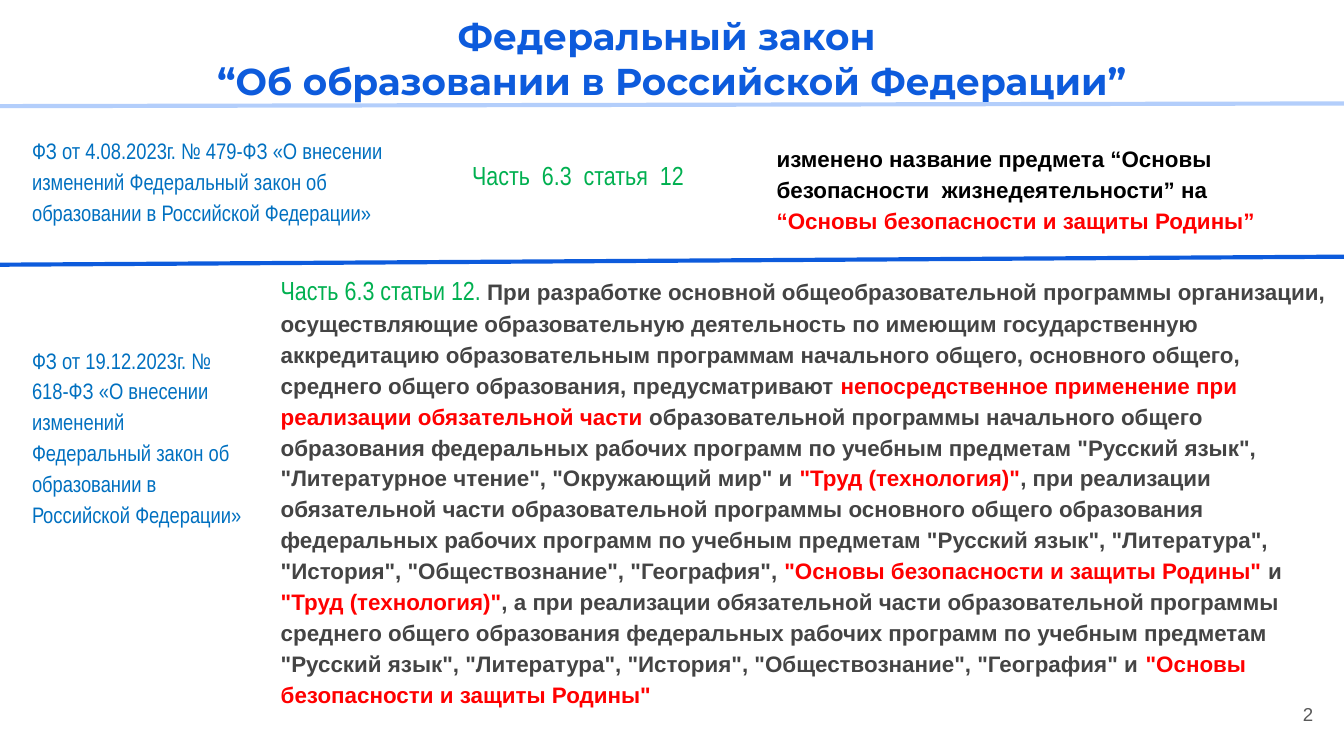
from lxml import etree
from pptx import Presentation
from pptx.dml.color import RGBColor
from pptx.enum.shapes import MSO_CONNECTOR
from pptx.enum.text import MSO_ANCHOR, MSO_AUTO_SIZE, PP_ALIGN
from pptx.oxml.ns import qn
from pptx.util import Inches, Pt

STRAIGHT = MSO_CONNECTOR.STRAIGHT
TOP, MIDDLE = MSO_ANCHOR.TOP, MSO_ANCHOR.MIDDLE
NO_AUTOFIT = MSO_AUTO_SIZE.NONE
LEFT, CENTER, RIGHT = PP_ALIGN.LEFT, PP_ALIGN.CENTER, PP_ALIGN.RIGHT

BLUE = RGBColor(0x0D, 0x5B, 0xDC)
PALE_BLUE = RGBColor(0xB3, 0xCE, 0xFB)
LAW_BLUE = RGBColor(0x00, 0x70, 0xC0)
GREEN = RGBColor(0x00, 0xB0, 0x50)
RED = RGBColor(0xFF, 0x00, 0x00)
BLACK = RGBColor(0x00, 0x00, 0x00)
DARK_GRAY = RGBColor(0x44, 0x44, 0x44)
GRAY = RGBColor(0x59, 0x59, 0x59)

# Run styles: font name, size in points, bold, colour
TITLE = ("Montserrat", 20, True, BLUE)
LAW = ("Arial Narrow", 12, False, LAW_BLUE)
ARTICLE = ("Arial Narrow", 14, False, GREEN)
STRONG = ("Arial", 12, True, BLACK)
BODY = ("Arial", 12, True, DARK_GRAY)
ACCENT = ("Arial", 12, True, RED)
NUMBER = ("Arial", 10, False, GRAY)

BODY_SPACING = {"line_spacing": 1.15, "space_after": Pt(12)}
ARTICLE_SPACING = {"line_spacing": 1.15, "space_before": Pt(12)}


def fill_text(shape, paragraphs, paragraph_format, anchor=TOP):
    """Write paragraphs, each a list of (text, run style), into the shape."""
    frame = shape.text_frame
    frame_format = {"word_wrap": True, "auto_size": NO_AUTOFIT, "vertical_anchor": anchor}
    for side in ("left", "right", "top", "bottom"):
        frame_format[f"margin_{side}"] = Inches(0.1)
    for name, value in frame_format.items():
        setattr(frame, name, value)
    for index, runs in enumerate(paragraphs):
        paragraph = frame.add_paragraph() if index else frame.paragraphs[0]
        for name, value in paragraph_format.items():
            setattr(paragraph, name, value)
        for text, (font_name, size, bold, color) in runs:
            run = paragraph.add_run()
            run.text = text
            for name, value in {"name": font_name, "size": Pt(size), "bold": bold}.items():
                setattr(run.font, name, value)
            run.font.color.rgb = color


presentation = Presentation()
presentation.slide_width = Inches(10)
presentation.slide_height = presentation.slide_width * 9 // 16
slide = presentation.slides.add_slide(presentation.slide_layouts[5])

title = slide.shapes.title
title.left, title.top = Inches(0.34), Inches(0)
title.width, title.height = Inches(9.32), Inches(0.74)
title_lines = ["Федеральный закон ", "“Об образовании в Российской Федерации”"]
fill_text(
    title,
    [[(line, TITLE)] for line in title_lines],
    {"alignment": CENTER, "line_spacing": 1.0, "space_before": Pt(0)},
)

law_subject = "«О внесении изменений Федеральный закон об образовании в Российской Федерации»"
article_runs = [
    ("Часть 6.3 статьи 12. ", ARTICLE),
    (
        "При разработке основной общеобразовательной программы организации, "
        "осуществляющие образовательную деятельность по имеющим государственную "
        "аккредитацию образовательным программам начального общего, основного общего, "
        "среднего общего образования, предусматривают ",
        BODY,
    ),
    ("непосредственное применение при реализации обязательной части ", ACCENT),
    (
        "образовательной программы начального общего образования федеральных рабочих "
        'программ по учебным предметам "Русский язык", "Литературное чтение", '
        '"Окружающий мир" и ',
        BODY,
    ),
    ('"Труд (технология)"', ACCENT),
    (
        ", при реализации обязательной части образовательной программы основного общего "
        "образования федеральных рабочих программ по учебным предметам "
        '"Русский язык", "Литература", "История", "Обществознание", "География", ',
        BODY,
    ),
    ('"Основы безопасности и защиты Родины" ', ACCENT),
    ("и ", BODY),
    ('"Труд (технология)"', ACCENT),
    (
        ", а при реализации обязательной части образовательной программы среднего общего "
        "образования федеральных рабочих программ по учебным предметам "
        '"Русский язык", "Литература", "История", "Обществознание", "География" и ',
        BODY,
    ),
    ('"Основы безопасности и защиты Родины"', ACCENT),
]
renaming_runs = [
    ("изменено название предмета “Основы безопасности  жизнедеятельности” на ", STRONG),
    ("“Основы безопасности и защиты Родины”", ACCENT),
]

# Each box: left, top, width, height, runs, paragraph format, anchor
text_boxes = [
    (0.14, 0.89, 2.91, 1.17, [(f"ФЗ от 4.08.2023г. № 479-ФЗ {law_subject}", LAW)], BODY_SPACING, TOP),
    (3.37, 1.05, 2.13, 0.69, [(" Часть  6.3  статья  12", ARTICLE)], BODY_SPACING, TOP),
    (5.68, 0.95, 3.98, 1.05, renaming_runs, BODY_SPACING, TOP),
    (0.14, 2.45, 1.77, 2.13, [(f"ФЗ от 19.12.2023г. № 618-ФЗ {law_subject}", LAW)], BODY_SPACING, TOP),
    (1.99, 1.91, 8.09, 3.47, article_runs, ARTICLE_SPACING, TOP),
    (9.27, 5.1, 0.6, 0.43, [("2", NUMBER)], {"alignment": RIGHT}, MIDDLE),
]
for left, top, width, height, runs, paragraph_format, anchor in text_boxes:
    box = slide.shapes.add_textbox(Inches(left), Inches(top), Inches(width), Inches(height))
    fill_text(box, [runs], {"alignment": LEFT, **paragraph_format}, anchor)

dividers = [
    (0, 1.97, 10, 1.91, BLUE),
    (-0.02, 0.79, 10, 0.77, PALE_BLUE),
]
for start_x, start_y, end_x, end_y, color in dividers:
    divider = slide.shapes.add_connector(
        STRAIGHT, Inches(start_x), Inches(start_y), Inches(end_x), Inches(end_y)
    )
    divider.line.color.rgb = color
    divider.line.width = Pt(2.25)
    etree.SubElement(divider._element.spPr, qn("a:effectLst"))

presentation.save("out.pptx")
